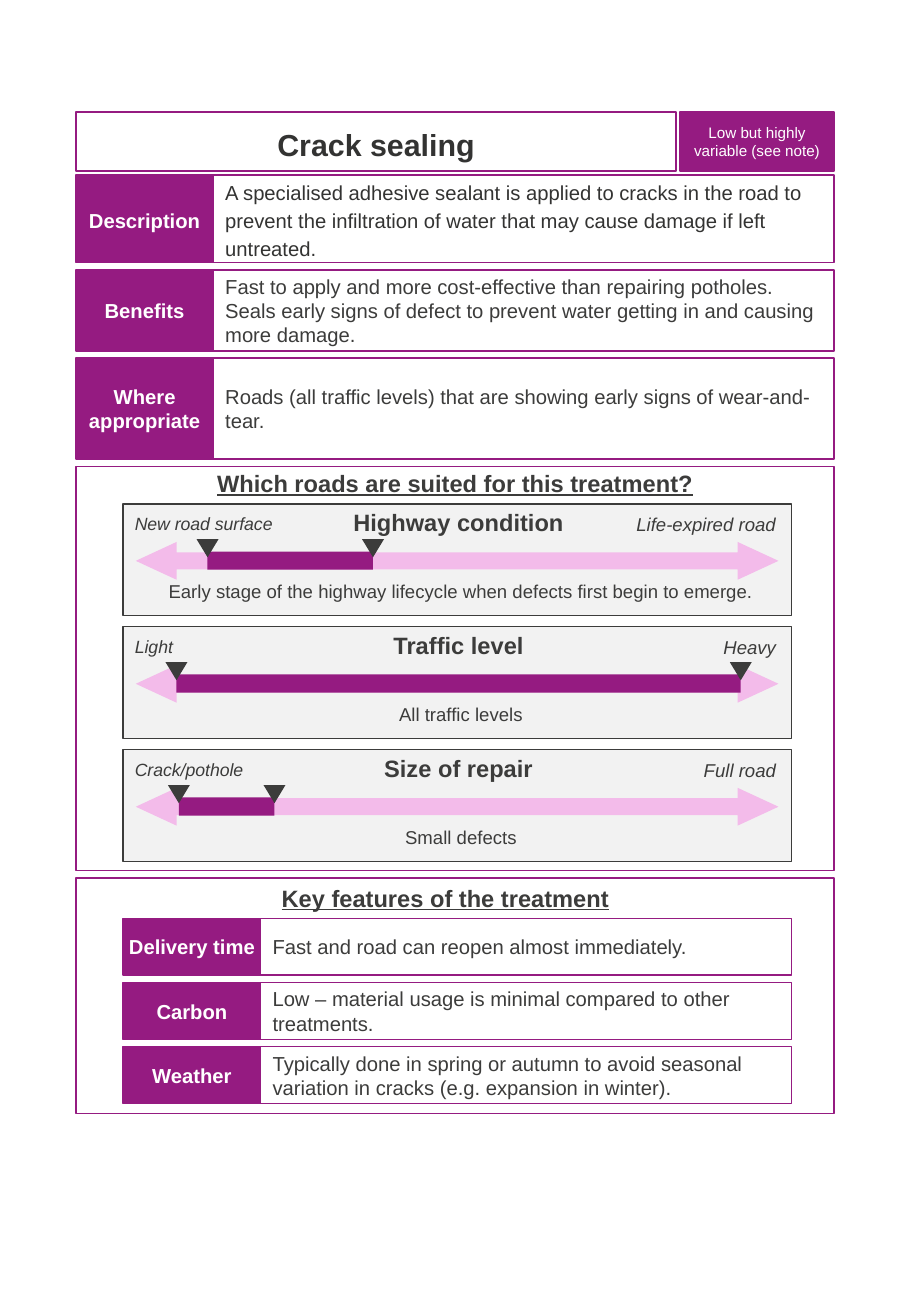
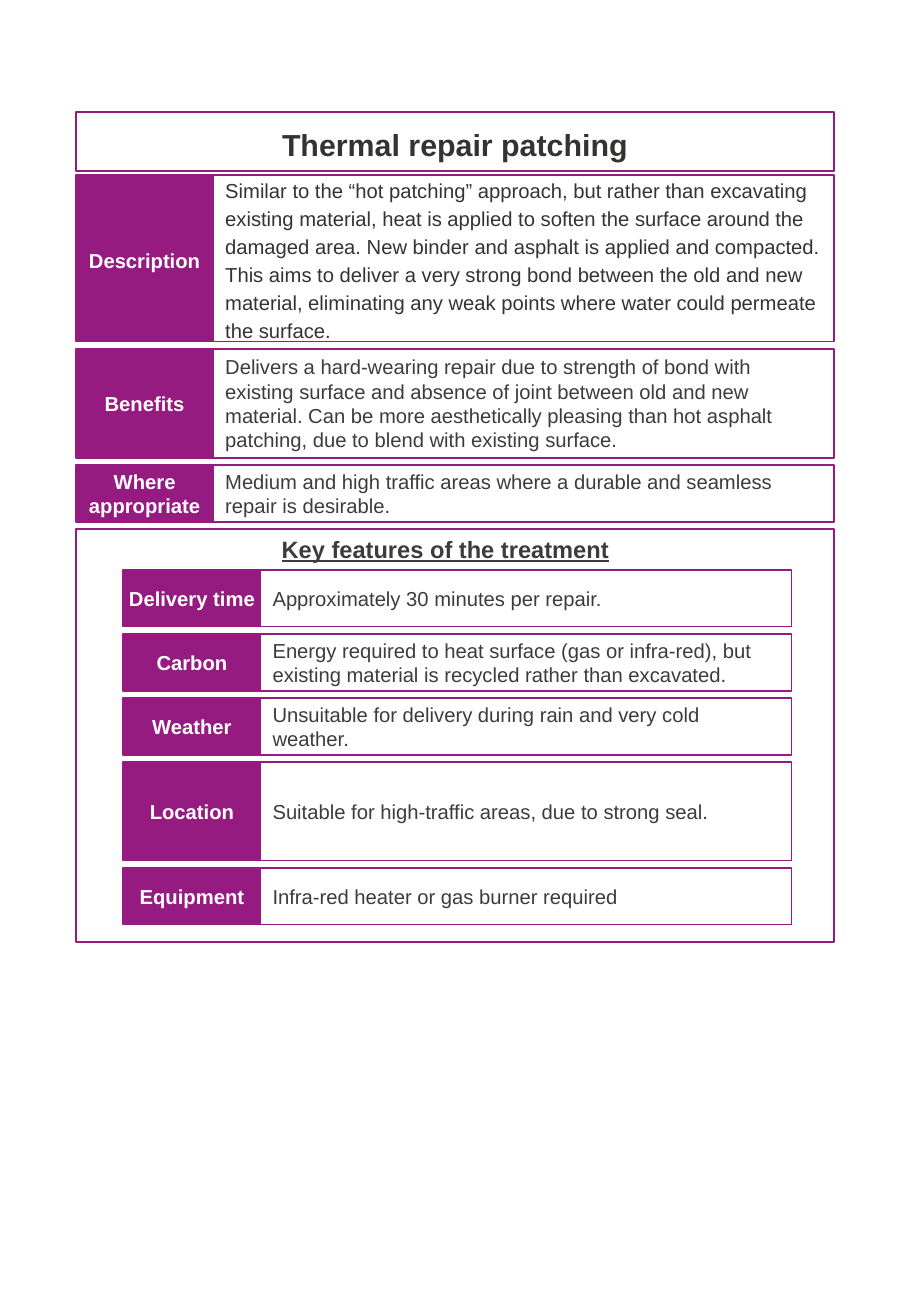
from pptx import Presentation
from pptx.dml.color import RGBColor
from pptx.enum.shapes import MSO_SHAPE
from pptx.enum.text import MSO_ANCHOR, PP_ALIGN
from pptx.util import Cm, Pt

RECTANGLE = MSO_SHAPE.RECTANGLE
DOUBLE_ARROW = MSO_SHAPE.LEFT_RIGHT_ARROW
TRIANGLE = MSO_SHAPE.ISOSCELES_TRIANGLE
MIDDLE = MSO_ANCHOR.MIDDLE
LEFT, CENTER, RIGHT = PP_ALIGN.LEFT, PP_ALIGN.CENTER, PP_ALIGN.RIGHT

PURPLE = RGBColor(0x95, 0x1B, 0x81)
PINK = RGBColor(0xF3, 0xBB, 0xEA)
PALE_GREY = RGBColor(0xF2, 0xF2, 0xF2)
GREY = RGBColor(0x3C, 0x3C, 0x3B)
DARK_GREY = RGBColor(0x33, 0x33, 0x32)
WHITE = RGBColor(0xFF, 0xFF, 0xFF)

FONT = "Arial"
PAGE_LEFT, PAGE_WIDTH = 1.59, 15.85
TITLE_TOP, TITLE_HEIGHT = 2.34, 1.24
ROWS_TOP = 3.66
CARD_LEFT, CARD_WIDTH, CARD_HEIGHT, CARD_PITCH = 2.58, 13.97, 2.34, 2.57
LABEL_WIDTH = 2.87
ROW_HEIGHT = 1.19
GAP = 0.15


class Factsheet:
    """Holds the deck, its style and the slide being filled."""

    def __init__(self):
        self.deck = Presentation()
        self.deck.slide_width, self.deck.slide_height = Cm(19.05), Cm(27.51)
        self.shapes = None

    def new_page(self):
        page = self.deck.slides.add_slide(self.deck.slide_layouts[6])
        self.shapes = page.shapes

    def set_text(self, box, text, size=12, color=GREY, align=LEFT, spaced=False,
                 bold=False, italic=False, underline=False):
        frame = box.text_frame
        frame.word_wrap = True
        frame.text = text
        para = frame.paragraphs[0]
        para.alignment = align
        if spaced:
            para.line_spacing = 1.15
            para.space_after = Pt(8)
        font = para.runs[0].font
        font.name, font.size, font.color.rgb = FONT, Pt(size), color
        font.bold, font.italic, font.underline = bold, italic, underline

    def shape(self, left, top, width, height, fill=None, line=None, kind=RECTANGLE):
        shape = self.shapes.add_shape(kind, Cm(left), Cm(top), Cm(width), Cm(height))
        shape.shadow.inherit = False
        if fill is None:
            shape.fill.background()
        else:
            shape.fill.solid()
            shape.fill.fore_color.rgb = fill
        if line is None:
            shape.line.fill.background()
        else:
            shape.line.color.rgb = line
            shape.line.width = Pt(1)
        return shape

    def text_shape(self, left, top, width, height, text, fill=None, inset=0.25, **style):
        box = self.shape(left, top, width, height, fill, PURPLE)
        frame = box.text_frame
        frame.vertical_anchor = MIDDLE
        frame.margin_left = frame.margin_right = Cm(inset)
        frame.margin_top = frame.margin_bottom = 0
        self.set_text(box, text, **style)

    def caption(self, left, top, width, height, text, **style):
        box = self.shapes.add_textbox(Cm(left), Cm(top), Cm(width), Cm(height))
        frame = box.text_frame
        frame.margin_left = frame.margin_right = 0
        frame.margin_top = frame.margin_bottom = 0
        self.set_text(box, text, **style)

    def heading(self, left, top, width, text):
        self.caption(left, top, width, 0.61, text, size=14, align=CENTER,
                     bold=True, underline=True)

    def title(self, text, badge=None):
        width = 12.55 if badge else PAGE_WIDTH
        self.text_shape(PAGE_LEFT, TITLE_TOP, width, TITLE_HEIGHT, text, inset=0.1,
                        size=18, color=DARK_GREY, align=CENTER, spaced=True, bold=True)
        if badge:
            badge_left = PAGE_LEFT + width + 0.08
            self.text_shape(badge_left, TITLE_TOP, PAGE_LEFT + PAGE_WIDTH - badge_left,
                            TITLE_HEIGHT, badge, PURPLE, size=9, color=WHITE, align=CENTER)

    def rows(self, left, top, width, entries):
        """Stack labelled rows and return the top of whatever follows them."""
        for label, text, height in entries:
            spaced = label == "Description"
            self.text_shape(left, top, LABEL_WIDTH, height, label, PURPLE, inset=0.1,
                            color=WHITE, align=CENTER, spaced=spaced, bold=True)
            self.text_shape(left + LABEL_WIDTH, top, width - LABEL_WIDTH, height, text,
                            color=DARK_GREY if spaced else GREY, spaced=spaced)
            top += height + GAP
        return top

    def summary(self, entries):
        return self.rows(PAGE_LEFT, ROWS_TOP, PAGE_WIDTH, entries)

    def gauge(self, top, title, low, high, note, start, end):
        """Draw a grouped card whose scale is marked from start to end."""
        page_shapes = self.shapes
        self.shapes = page_shapes.add_group_shape().shapes
        self.shape(CARD_LEFT, top, CARD_WIDTH, CARD_HEIGHT, PALE_GREY, GREY)
        self.caption(2.82, top + 0.2, 4.27, 0.46, low, size=10.5, italic=True)
        self.caption(12.24, top + 0.2, 3.99, 0.48, high, size=11, italic=True, align=RIGHT)
        self.caption(6.1, top + 0.09, 6.98, 0.61, title, size=14, bold=True, align=CENTER)
        self.caption(2.92, top + 1.59, 13.44, 0.48, note, size=11, align=CENTER)
        arrow = self.shape(2.84, top + 0.8, 13.44, 0.79, PINK, kind=DOUBLE_ARROW)
        arrow.adjustments[0], arrow.adjustments[1] = 0.45, 1.08
        self.shape(start, top + 1, end - start, 0.38, PURPLE)
        for position in (start, end):
            marker = self.shape(position - 0.23, top + 0.74, 0.46, 0.38, GREY, kind=TRIANGLE)
            marker.rotation = 180
        self.shapes = page_shapes

    def suitability(self, top, gauges):
        height = 8.45
        self.shape(PAGE_LEFT, top, PAGE_WIDTH, height, line=PURPLE)
        self.heading(4.06, top + 0.05, 10.92, "Which roads are suited for this treatment?")
        for index, gauge in enumerate(gauges):
            self.gauge(top + 0.78 + index * CARD_PITCH, *gauge)
        return top + height + GAP

    def features(self, top, height, entries):
        self.shape(PAGE_LEFT, top, PAGE_WIDTH, height, line=PURPLE)
        self.heading(2.57, top + 0.12, 13.49, "Key features of the treatment")
        self.rows(CARD_LEFT, top + 0.85, CARD_WIDTH, entries)


def crack_sealing(sheet):
    sheet.new_page()
    sheet.title("Crack sealing", "Low but highly variable (see note)")
    top = sheet.summary([
        ("Description", "A specialised adhesive sealant is applied to cracks in the road to "
         "prevent the infiltration of water that may cause damage if left untreated.", 1.83),
        ("Benefits", "Fast to apply and more cost-effective than repairing potholes. Seals "
         "early signs of defect to prevent water getting in and causing more damage.", 1.7),
        ("Where appropriate", "Roads (all traffic levels) that are showing early signs of "
         "wear-and-tear.", 2.11),
    ])
    top = sheet.suitability(top, [
        ("Highway condition", "New road surface", "Life-expired road",
         "Early stage of the highway lifecycle when defects first begin to emerge.", 4.34, 7.8),
        ("Traffic level", "Light", "Heavy", "All traffic levels", 3.69, 15.49),
        ("Size of repair", "Crack/pothole", "Full road", "Small defects", 3.74, 5.74),
    ])
    sheet.features(top, 4.93, [
        ("Delivery time", "Fast and road can reopen almost immediately.", ROW_HEIGHT),
        ("Carbon", "Low – material usage is minimal compared to other treatments.", ROW_HEIGHT),
        ("Weather", "Typically done in spring or autumn to avoid seasonal variation in cracks "
         "(e.g. expansion in winter).", ROW_HEIGHT),
    ])


def thermal_patching(sheet):
    sheet.new_page()
    sheet.title("Thermal repair patching")
    top = sheet.summary([
        ("Description", "Similar to the “hot patching” approach, but rather than excavating "
         "existing material, heat is applied to soften the surface around the damaged area. "
         "New binder and asphalt is applied and compacted. This aims to deliver a very strong "
         "bond between the old and new material, eliminating any weak points where water "
         "could permeate the surface.", 3.48),
        ("Benefits", "Delivers a hard-wearing repair due to strength of bond with existing "
         "surface and absence of joint between old and new material. Can be more "
         "aesthetically pleasing than hot asphalt patching, due to blend with existing "
         "surface.", 2.28),
        ("Where appropriate", "Medium and high traffic areas where a durable and seamless "
         "repair is desirable.", ROW_HEIGHT),
    ])
    sheet.features(top, 8.64, [
        ("Delivery time", "Approximately 30 minutes per repair.", ROW_HEIGHT),
        ("Carbon", "Energy required to heat surface (gas or infra-red), but existing material "
         "is recycled rather than excavated.", ROW_HEIGHT),
        ("Weather", "Unsuitable for delivery during rain and very cold weather.", ROW_HEIGHT),
        ("Location", "Suitable for high-traffic areas, due to strong seal.", 2.06),
        ("Equipment", "Infra-red heater or gas burner required", ROW_HEIGHT),
    ])


def main():
    sheet = Factsheet()
    crack_sealing(sheet)
    thermal_patching(sheet)
    sheet.deck.save("out.pptx")


if __name__ == "__main__":
    main()
